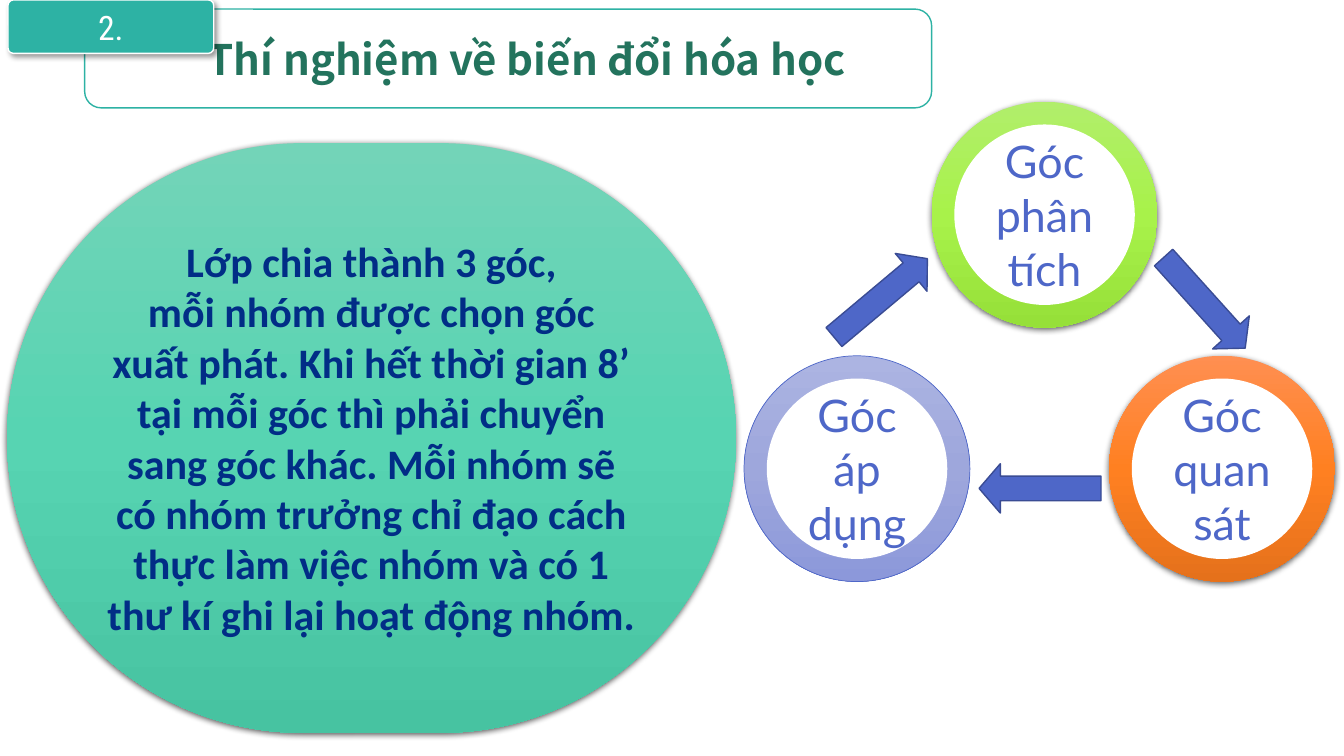
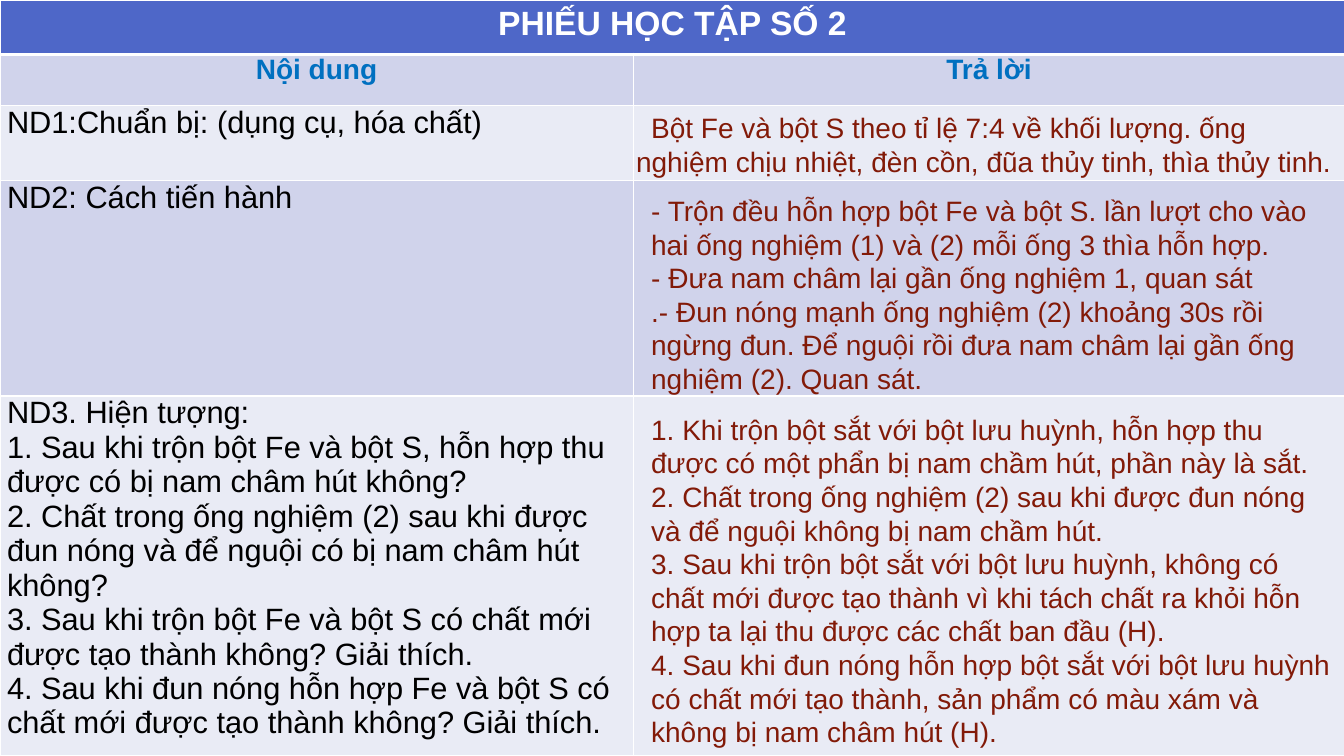
from dataclasses import dataclass

from lxml.etree import SubElement
from pptx import Presentation
from pptx.dml.color import RGBColor
from pptx.enum.shapes import MSO_SHAPE
from pptx.enum.text import MSO_ANCHOR, MSO_AUTO_SIZE, PP_ALIGN
from pptx.oxml.ns import qn
from pptx.util import Inches, Pt


@dataclass(frozen=True)
class Theme:
    # Colours
    white: str = "FFFFFF"
    black: str = "000000"
    teal: str = "2DB2A4"
    title: str = "23735D"
    navy: str = "012D86"
    blue: str = "4E67C8"
    blue_edge: str = "3A4C94"
    heading: str = "0070C0"
    answer: str = "821A08"
    bands: tuple = ("E9EBF5", "D0D3EB")
    mint_fade: tuple = ("73D4B8", "57D4B2", "47C3A1")
    green_fade: tuple = ("B1EE6B", "A8F24A", "96E039")
    orange_fade: tuple = ("FF8F51", "FF8021", "E5711B")
    violet_fade: tuple = ("ACB4E2", "9EA7DC", "8C98DA")
    # Shadows: opacity %, blur pt, distance pt, direction in degrees
    tab_shadow: tuple = (40, 4, 3, 45)
    soft_shadow: tuple = (63, 4.5, 1.5, 90)
    # Fonts and sizes
    title_font: str = "Noto Sans CJK SC"
    tab_font: str = "Roboto Condensed"
    body_font: str = "Calibri"
    node_font: str = "Lato"
    sheet_font: str = "Arial"
    small: int = 20
    text: int = 22
    head: int = 24
    large: int = 30
    node: int = 32


def rgb(value):
    return RGBColor.from_string(value)


class Deck:
    def __init__(self, theme):
        self.t = theme
        self.prs = Presentation()
        self.prs.slide_width, self.prs.slide_height = Inches(13.33), Inches(7.5)
        self.s = None

    def slide(self, layout):
        self.s = self.prs.slides.add_slide(self.prs.slide_layouts[layout])

    def put_text(self, tf, lines, font, size, color, bold=False, align=PP_ALIGN.LEFT):
        tf.word_wrap = True
        tf.text = "\n".join(lines)
        for p in tf.paragraphs:
            p.alignment = align
            for r in p.runs:
                r.font.name, r.font.size, r.font.bold = font, Pt(size), bold
                r.font.color.rgb = rgb(color)

    def title(self, text, x, y, w, h, indent):
        sp = self.s.shapes.title
        sp.left, sp.top, sp.width, sp.height = map(Inches, (x, y, w, h))
        tf = sp.text_frame
        self.put_text(tf, [text], self.t.title_font, self.t.large, self.t.title, True)
        tf.vertical_anchor = MSO_ANCHOR.MIDDLE
        tf.margin_left = Inches(indent)

    def shape(self, kind, x, y, w, h, fill=None, line=None, line_w=1.0,
              shadow=None, adj=(), rot=0):
        sp = self.s.shapes.add_shape(kind, *map(Inches, (x, y, w, h)))
        sp.rotation = rot
        for i, value in enumerate(adj):
            sp.adjustments[i] = value
        if fill is None:
            sp.fill.background()
        elif isinstance(fill, tuple):
            self.fade(sp, fill)
        else:
            sp.fill.solid()
            sp.fill.fore_color.rgb = rgb(fill)
        if line:
            sp.line.color.rgb = rgb(line)
            sp.line.width = Pt(line_w)
        else:
            sp.line.fill.background()
        sp.shadow.inherit = False
        if shadow:
            self.cast(sp, *shadow)
        return sp

    def fade(self, sp, colors):
        """Top-to-bottom gradient with evenly spaced stops."""
        sp.fill.gradient()
        sp.fill.gradient_angle = 270
        stops = sp._element.spPr.find(qn("a:gradFill")).find(qn("a:gsLst"))
        for gs in list(stops):
            stops.remove(gs)
        for i, color in enumerate(colors):
            gs = SubElement(stops, qn("a:gs"), pos=str(100000 * i // (len(colors) - 1)))
            SubElement(gs, qn("a:srgbClr"), val=color)

    def cast(self, sp, opacity, blur, dist, angle):
        effects = sp._element.spPr.find(qn("a:effectLst"))
        shadow = SubElement(effects, qn("a:outerShdw"), blurRad=str(Pt(blur)),
                            dist=str(Pt(dist)), dir=str(angle * 60000), rotWithShape="0")
        color = SubElement(shadow, qn("a:srgbClr"), val=self.t.black)
        SubElement(color, qn("a:alpha"), val=str(opacity * 1000))

    def ring(self, text, x, y, fade, **style):
        outer, inner = 2.24, 1.79
        gap = (outer - inner) / 2
        self.shape(MSO_SHAPE.OVAL, x, y, outer, outer, fade, **style)
        sp = self.shape(MSO_SHAPE.OVAL, x + gap, y + gap, inner, inner, self.t.white)
        self.put_text(sp.text_frame, [text], self.t.node_font, self.t.node, self.t.blue,
                      align=PP_ALIGN.CENTER)

    def arrow(self, x, y, rot):
        self.shape(MSO_SHAPE.RIGHT_ARROW, x, y, 1.21, 0.49, self.t.blue,
                   self.t.blue_edge, adj=(0.5, 0.43), rot=rot)

    def answer(self, lines, x, y, w, h, indent=0):
        sp = self.s.shapes.add_textbox(*map(Inches, (x, y, w, h)))
        tf = sp.text_frame
        self.put_text(tf, lines, self.t.sheet_font, self.t.small, self.t.answer)
        tf.auto_size = MSO_AUTO_SIZE.SHAPE_TO_FIT_TEXT
        if indent:
            tf.paragraphs[0]._p.get_or_add_pPr().set("indent", str(Inches(indent)))

    def table(self, widths, heights):
        frame = self.s.shapes.add_table(len(heights), len(widths), 0, 0,
                                        Inches(sum(widths)), Inches(sum(heights)))
        tbl = frame.table
        tbl.horz_banding = False
        for col, width in zip(tbl.columns, widths):
            col.width = Inches(width)
        for row, height in zip(tbl.rows, heights):
            row.height = Inches(height)
        return tbl

    def cell(self, cell, fill, bottom=1):
        tcPr = cell._tc.get_or_add_tcPr()
        for side, width in (("L", 1), ("R", 1), ("T", 1), ("B", bottom)):
            ln = SubElement(tcPr, qn(f"a:ln{side}"), w=str(Pt(width)))
            SubElement(SubElement(ln, qn("a:solidFill")), qn("a:srgbClr"), val=self.t.white)
        cell.fill.solid()
        cell.fill.fore_color.rgb = rgb(fill)


def corners_slide(d):
    t = d.t
    d.slide(5)

    # Title band and number tab
    band = (0.84, 0.09, 8.4, 0.98)
    d.title("Thí nghiệm về biến đổi hóa học", *band, indent=1.22)
    d.shape(MSO_SHAPE.ROUNDED_RECTANGLE, *band, line=t.teal)
    tab = d.shape(MSO_SHAPE.ROUNDED_RECTANGLE, 0.08, 0, 2.04, 0.53, t.teal, t.white,
                  shadow=t.tab_shadow, adj=(0.1,))
    d.put_text(tab.text_frame, ["2."], t.tab_font, t.head, t.white, align=PP_ALIGN.CENTER)

    # Instructions
    pill = d.shape(MSO_SHAPE.ROUNDED_RECTANGLE, 0.07, 1.42, 7.23, 5.85, t.mint_fade,
                   shadow=t.soft_shadow, adj=(0.5,))
    tf = pill.text_frame
    d.put_text(tf, [
        "Lớp chia thành 3 góc,",
        "mỗi nhóm được chọn góc xuất phát. Khi hết thời gian 8’ tại mỗi góc thì phải "
        "chuyển sang góc khác. Mỗi nhóm sẽ có nhóm trưởng chỉ đạo cách thực làm việc "
        "nhóm và có 1 thư kí ghi lại hoạt động nhóm.",
    ], t.body_font, t.large, t.navy, True, PP_ALIGN.CENTER)
    tf.vertical_anchor = MSO_ANCHOR.TOP
    tf.margin_left = tf.margin_right = Inches(0.12)
    tf.margin_top = tf.margin_bottom = Inches(0.06)

    # Cycle of corners
    d.ring("Góc phân tích", 9.24, 1.01, t.green_fade, shadow=t.soft_shadow)
    d.ring("Góc quan sát", 11, 3.53, t.orange_fade, shadow=t.soft_shadow)
    d.ring("Góc áp dụng", 7.38, 3.53, t.violet_fade, line=t.blue, line_w=0.5)
    for x, y, rot in ((11.34, 2.76, 48), (9.71, 4.6, 180), (8.13, 2.71, 320)):
        d.arrow(x, y, rot)


def worksheet_slide(d):
    t = d.t
    d.slide(6)

    # Worksheet table
    tbl = d.table((6.28, 7.06), (0.54, 0.51, 0.74, 2.14, 3.57))
    for i, row in enumerate(tbl.rows):
        for cell in row.cells:
            d.cell(cell, t.bands[i % 2] if i else t.blue, bottom=1 if i else 3)
            if i:
                cell.margin_left = cell.margin_right = Inches(0.07)
                cell.margin_top = cell.margin_bottom = 0
    tbl.cell(0, 0).merge(tbl.cell(0, 1))
    d.put_text(tbl.cell(0, 0).text_frame, ["PHIẾU HỌC TẬP SỐ 2"], t.sheet_font, t.head,
               t.white, True, PP_ALIGN.CENTER)
    for col, heading in enumerate(("Nội dung", "Trả lời")):
        d.put_text(tbl.cell(1, col).text_frame, [heading], t.sheet_font, t.small,
                   t.heading, True, PP_ALIGN.CENTER)
    questions = (
        ["ND1:Chuẩn bị: (dụng cụ, hóa chất)"],
        ["ND2: Cách tiến hành"],
        ["ND3. Hiện tượng:",
         "1. Sau khi trộn bột Fe và bột S, hỗn hợp thu được có bị nam châm hút không?",
         "2. Chất trong ống nghiệm (2) sau khi được đun nóng và để nguội có bị nam châm "
         "hút không?",
         "3. Sau khi trộn bột Fe và bột S có chất mới được tạo thành không? Giải thích.",
         "4. Sau khi đun nóng hỗn hợp Fe và bột S có chất mới được tạo thành không? "
         "Giải thích."],
    )
    for row, lines in enumerate(questions, 2):
        d.put_text(tbl.cell(row, 0).text_frame, lines, t.sheet_font, t.text, t.black)

    # Answers
    d.answer(["Bột Fe và bột S theo tỉ lệ 7:4 về khối lượng. ống nghiệm chịu nhiệt, "
              "đèn cồn, đũa thủy tinh, thìa thủy tinh."],
             6.21, 1.05, 7.12, 0.77, indent=0.15)
    d.answer(["- Trộn đều hỗn hợp bột Fe và bột S. lần lượt cho vào hai ống nghiệm (1) "
              "và (2) mỗi ống 3 thìa hỗn hợp.",
              "- Đưa nam châm lại gần ống nghiệm 1, quan sát",
              ".- Đun nóng mạnh ống nghiệm (2) khoảng 30s rồi ngừng đun. Để nguội rồi "
              "đưa nam châm lại gần ống nghiệm (2). Quan sát."],
             6.36, 1.87, 6.98, 2.12)
    d.answer(["1. Khi trộn bột sắt với bột lưu huỳnh, hỗn hợp thu được có một phẩn bị "
              "nam chầm hút, phần này là sắt.",
              "2. Chất trong ống nghiệm (2) sau khi được đun nóng và để nguội không bị "
              "nam chầm hút.",
              "3. Sau khi trộn bột sắt với bột lưu huỳnh, không có chất mới được tạo "
              "thành vì khi tách chất ra khỏi hỗn hợp ta lại thu được các chất ban đầu (H).",
              "4. Sau khi đun nóng hỗn hợp bột sắt với bột lưu huỳnh có chất mới tạo "
              "thành, sản phẩm có màu xám và không bị nam châm hút (H)."],
             6.36, 4.04, 6.96, 3.47)


def main():
    d = Deck(Theme())
    corners_slide(d)
    worksheet_slide(d)
    d.prs.save("out.pptx")


if __name__ == "__main__":
    main()
